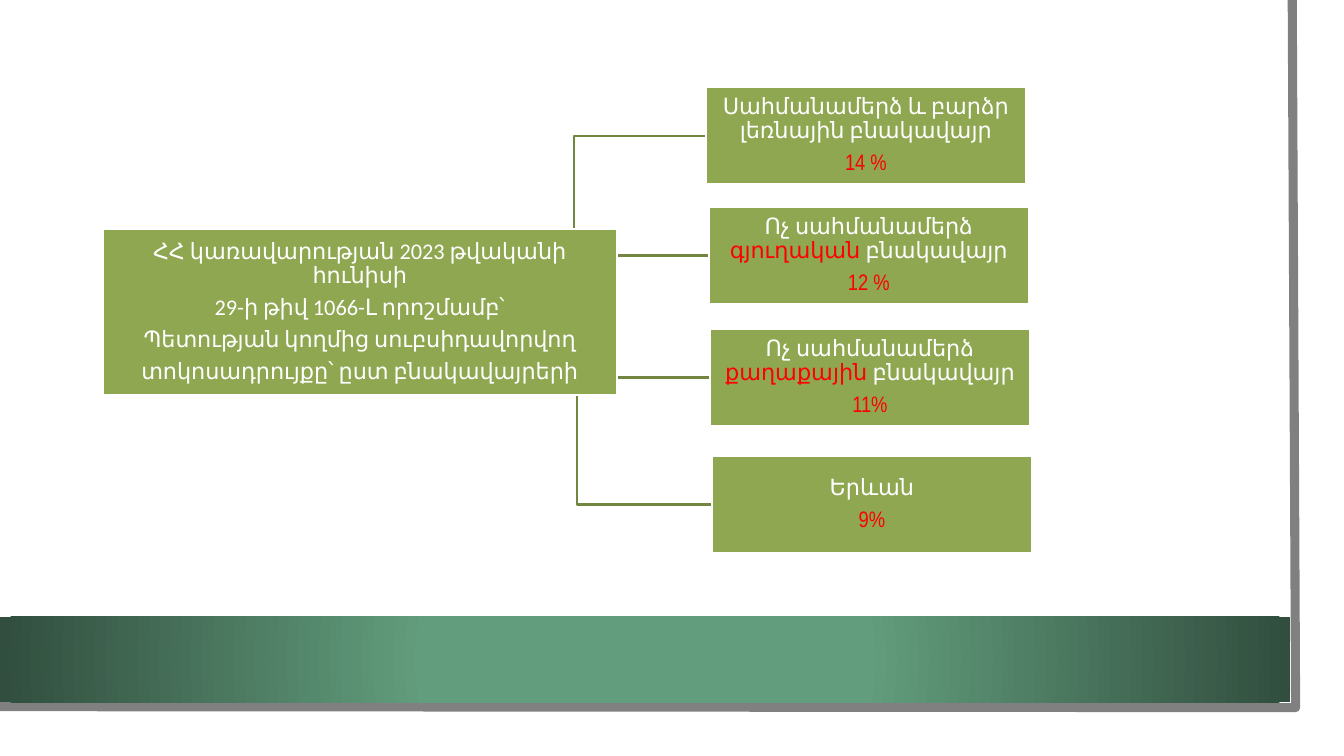
from dataclasses import dataclass

from lxml import etree
from pptx import Presentation
from pptx.dml.color import RGBColor
from pptx.enum.shapes import MSO_SHAPE
from pptx.enum.text import MSO_ANCHOR, PP_ALIGN
from pptx.oxml.ns import qn
from pptx.shapes.autoshape import Shape
from pptx.slide import Slide
from pptx.util import Inches, Pt

RECT = MSO_SHAPE.RECTANGLE
MIDDLE = MSO_ANCHOR.MIDDLE
CENTER = PP_ALIGN.CENTER

SLIDE_W, SLIDE_H = Inches(13.33), Inches(7.5)


@dataclass(frozen=True)
class Theme:
    box: RGBColor = RGBColor(0x8F, 0xA7, 0x51)
    white: RGBColor = RGBColor(0xFF, 0xFF, 0xFF)
    accent: RGBColor = RGBColor(0xFF, 0x00, 0x00)
    branch: RGBColor = RGBColor(0x73, 0x86, 0x41)
    frame: RGBColor = RGBColor(0x80, 0x80, 0x80)
    band_inner: RGBColor = RGBColor(0x62, 0x9D, 0x7D)
    band_outer: RGBColor = RGBColor(0x31, 0x4E, 0x3E)
    root_font: str = "Calibri"
    rate_font: str = "Arial Narrow"
    text: Pt = Pt(16)
    gap: Pt = Pt(5.6)
    thin: Pt = Pt(1.5)
    thick: Pt = Pt(6.5)


THEME = Theme()


@dataclass(frozen=True)
class Run:
    text: str
    color: RGBColor = THEME.white


@dataclass(frozen=True)
class Box:
    """Left, top, width and height are percentages of the slide."""
    left: float
    top: float
    width: float
    height: float
    font: str
    paragraphs: list[list[Run]]

    @property
    def middle(self) -> float:
        return self.top + self.height / 2


def px(share: float) -> int:
    """Percentage of the slide width as a length."""
    return round(SLIDE_W * share / 100)


def py(share: float) -> int:
    """Percentage of the slide height as a length."""
    return round(SLIDE_H * share / 100)


def red(text: str) -> Run:
    return Run(text, THEME.accent)


def rate_box(left: float, top: float, place: list[Run], rate: str) -> Box:
    return Box(left, top, 23.85, 12.93, THEME.rate_font, [place, [red(rate)]])


def non_border(kind: str) -> list[Run]:
    return [Run("Ոչ սահմանամերձ "), red(kind), Run(" բնակավայր")]


ROOT = Box(7.65, 30.27, 38.25, 22, THEME.root_font, [
    [Run("ՀՀ կառավարության 2023 թվականի հունիսի")],
    [Run("29-ի թիվ 1066-Լ որոշմամբ՝")],
    [Run("Պետության կողմից սուբսիդավորվող")],
    [Run("տոկոսադրույքը՝ ըստ բնակավայրերի")],
])
RATES = [
    rate_box(52.5, 11.47, [Run("Սահմանամերձ և բարձր լեռնային բնակավայր")], "14 %"),
    rate_box(52.72, 27.33, non_border("գյուղական"), "12 %"),
    rate_box(52.8, 43.47, non_border("քաղաքային"), "11%"),
    rate_box(52.95, 60.27, [Run("Երևան")], "9%"),
]
BRANCH_START = 32.92


def add_rect(s: Slide, left: float, top: float, width: float, height: float) -> Shape:
    sp = s.shapes.add_shape(RECT, px(left), py(top), px(width), py(height))
    sp.shadow.inherit = False
    return sp


def add_path(s: Slide, points: list[tuple[float, float]], color: RGBColor, width: Pt) -> None:
    """Open, unfilled line through points given in percentages of the slide."""
    start, *rest = [(px(x), py(y)) for x, y in points]
    builder = s.shapes.build_freeform(*start)
    builder.add_line_segments(rest, close=False)
    sp = builder.convert_to_shape()
    sp.shadow.inherit = False
    sp.fill.background()
    sp.line.color.rgb = color
    sp.line.width = width


def add_band(s: Slide) -> None:
    """Green strip with a gradient running outwards from its centre."""
    sp = add_rect(s, 0, 81.6, 96, 11.33)
    sp.line.fill.background()
    sp.fill.gradient()
    inner, outer = sp.fill.gradient_stops
    inner.position, inner.color.rgb = 0.34, THEME.band_inner
    outer.position, outer.color.rgb = 1, THEME.band_outer
    grad = sp.fill._xPr.find(qn("a:gradFill"))
    grad.remove(grad.find(qn("a:lin")))
    circle = etree.SubElement(grad, qn("a:path"), {"path": "circle"})
    etree.SubElement(circle, qn("a:fillToRect"), dict.fromkeys("ltrb", "50000"))


def add_branch(s: Slide, box: Box) -> None:
    bend = (BRANCH_START + box.left) / 2
    points = [(BRANCH_START, ROOT.middle), (bend, ROOT.middle),
              (bend, box.middle), (box.left, box.middle)]
    add_path(s, points, THEME.branch, THEME.thin)


def add_box(s: Slide, box: Box) -> None:
    sp = add_rect(s, box.left, box.top, box.width, box.height)
    sp.fill.solid()
    sp.fill.fore_color.rgb = THEME.box
    sp.line.color.rgb = THEME.white
    sp.line.width = THEME.thin
    tf = sp.text_frame
    tf.word_wrap = True
    tf.vertical_anchor = MIDDLE
    tf.margin_left = tf.margin_top = tf.margin_right = tf.margin_bottom = Inches(0.01)
    for i, runs in enumerate(box.paragraphs):
        p = tf.add_paragraph() if i else tf.paragraphs[0]
        p.alignment = CENTER
        p.line_spacing = 0.9
        p.space_after = THEME.gap
        p.font.size = THEME.text
        p.font.name = box.font
        for run in runs:
            r = p.add_run()
            r.text = run.text
            r.font.color.rgb = run.color


def main() -> None:
    prs = Presentation()
    prs.slide_width, prs.slide_height = SLIDE_W, SLIDE_H
    s = prs.slides.add_slide(prs.slide_layouts[6])
    add_path(s, [(96.15, 0), (96.4, 93.6), (0, 93.47)], THEME.frame, THEME.thick)
    add_band(s)
    for box in reversed(RATES):
        add_branch(s, box)
    for box in [ROOT, *RATES]:
        add_box(s, box)
    prs.save("out.pptx")


if __name__ == "__main__":
    main()
